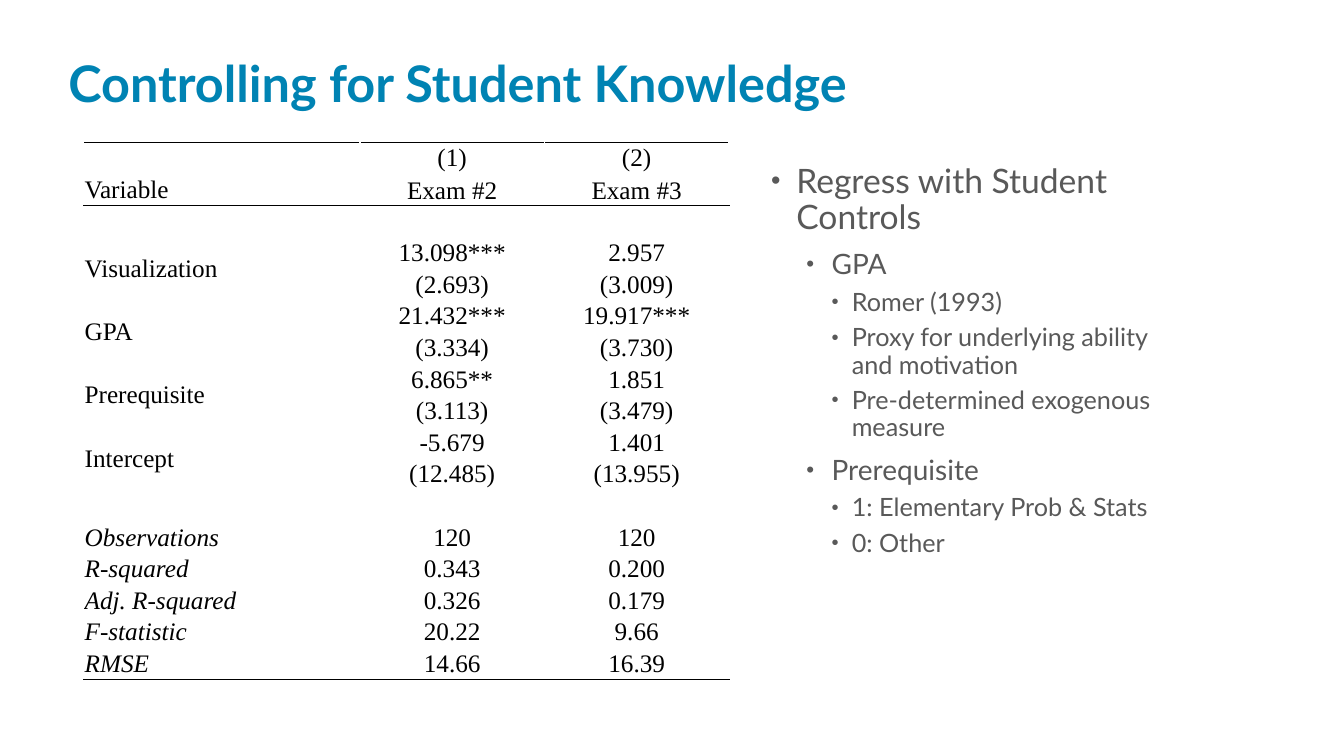
import pptx
import pptx.dml.color
import pptx.enum.text
import pptx.oxml
import pptx.oxml.ns
import pptx.util
from pptx.util import Inches

COLORS = {"title": "0083B3", "body": "595959", "table": "000000"}
ALIGN = pptx.enum.text.PP_ALIGN
ANCHOR = pptx.enum.text.MSO_ANCHOR

# Outline levels: left margin, indent, space before, text size
LEVELS = [(0.3, -0.25, 18, 24), (0.65, -0.25, 10, 20), (0.85, -0.2, 6, 18)]

OUTLINE = [
    (0, "Regress with Student Controls"),
    (1, "GPA"),
    (2, "Romer (1993)"),
    (2, "Proxy for underlying ability and motivation"),
    (2, "Pre-determined exogenous measure"),
    (1, "Prerequisite"),
    (2, "1: Elementary Prob & Stats"),
    (2, "0: Other"),
]

REGRESSION = [
    ("", "(1)", "(2)"),
    ("Variable", "Exam #2", "Exam #3"),
    ("", "", ""),
    ("Visualization", "13.098***", "2.957"),
    ("", "(2.693)", "(3.009)"),
    ("GPA", "21.432***", "19.917***"),
    ("", "(3.334)", "(3.730)"),
    ("Prerequisite", "6.865**", "1.851"),
    ("", "(3.113)", "(3.479)"),
    ("Intercept", "-5.679", "1.401"),
    ("", "(12.485)", "(13.955)"),
    ("", "", ""),
    ("Observations", "120", "120"),
    ("R-squared", "0.343", "0.200"),
    ("Adj. R-squared", "0.326", "0.179"),
    ("F-statistic", "20.22", "9.66"),
    ("RMSE", "14.66", "16.39"),
]
HEADER_ROW = 1
COEFFICIENT_ROWS = range(3, 11, 2)
FIRST_STATISTIC_ROW = 12
# Row index: sides that carry a rule
RULES = {0: "T", HEADER_ROW: "B", HEADER_ROW + 1: "T", len(REGRESSION) - 1: "B"}


class SlideBuilder:
    def __init__(self, slide):
        self.slide = slide
        self.text_font = "Lato"
        self.table_font = "Times New Roman"

    def style(self, paragraph, font_name, size, color, bold=False, italic=False):
        for run in paragraph.runs:
            run.font.name = font_name
            run.font.size = pptx.util.Pt(size)
            run.font.bold = bold
            run.font.italic = italic
            run.font.color.rgb = pptx.dml.color.RGBColor.from_string(COLORS[color])

    def text_frame(self, left, top, width, height, anchor):
        shape = self.slide.shapes.add_textbox(
            Inches(left), Inches(top), Inches(width), Inches(height))
        shape.text_frame.word_wrap = True
        shape.text_frame.vertical_anchor = anchor
        return shape.text_frame

    def title(self, text, *box):
        text_frame = self.text_frame(*box, ANCHOR.BOTTOM)
        text_frame.text = text
        paragraph = text_frame.paragraphs[0]
        paragraph.line_spacing = 0.8
        self.style(paragraph, self.text_font, 36, "title", bold=True)

    def bullet(self, paragraph, margin, indent):
        properties = paragraph._p.get_or_add_pPr()
        properties.set("marL", str(Inches(margin)))
        properties.set("indent", str(Inches(indent)))
        namespace = pptx.oxml.ns.nsdecls("a")
        for xml in (
            f'<a:buClr {namespace}><a:srgbClr val="{COLORS["body"]}"/></a:buClr>',
            f'<a:buSzPct {namespace} val="80000"/>',
            f'<a:buFont {namespace} typeface="Arial"/>',
            f'<a:buChar {namespace} char="•"/>',
        ):
            properties.append(pptx.oxml.parse_xml(xml))

    def outline(self, items, *box):
        text_frame = self.text_frame(*box, ANCHOR.TOP)
        for index, (level, text) in enumerate(items):
            paragraph = text_frame.add_paragraph() if index else text_frame.paragraphs[0]
            margin, indent, space_before, size = LEVELS[level]
            paragraph.text = text
            paragraph.level = level
            self.bullet(paragraph, margin, indent)
            paragraph.line_spacing = 0.9
            paragraph.space_before = pptx.util.Pt(space_before if index else 0)
            self.style(paragraph, self.text_font, size, "body")

    def rule(self, cell, side):
        cell._tc.get_or_add_tcPr().insert(0, pptx.oxml.parse_xml(
            f'<a:ln{side} {pptx.oxml.ns.nsdecls("a")} w="6350"><a:solidFill>'
            f'<a:srgbClr val="{COLORS["table"]}"/></a:solidFill></a:ln{side}>'))

    def cell(self, cell, text, row, column):
        cell.margin_left = cell.margin_right = cell.margin_top = Inches(0.01)
        cell.margin_bottom = 0
        cell.fill.background()
        bottom = row == HEADER_ROW and column > 0
        cell.vertical_anchor = ANCHOR.BOTTOM if bottom else ANCHOR.MIDDLE
        cell.text_frame.text = text
        paragraph = cell.text_frame.paragraphs[0]
        paragraph.alignment = ALIGN.CENTER if column else ALIGN.LEFT
        self.style(paragraph, self.table_font, 18, "table",
                   italic=column == 0 and row >= FIRST_STATISTIC_ROW)
        if row in RULES:
            self.rule(cell, RULES[row])

    def table(self, rows, column_widths, left, top, height):
        table = self.slide.shapes.add_table(
            len(rows), len(column_widths), Inches(left), Inches(top),
            Inches(sum(column_widths)), Inches(height)).table
        table.first_row = False
        table.horz_banding = False
        for column, width in zip(table.columns, column_widths):
            column.width = Inches(width)
        for row, texts in enumerate(rows):
            for column, text in enumerate(texts):
                self.cell(table.cell(row, column), text, row, column)
        # Each variable name spans its coefficient and standard error
        for row in COEFFICIENT_ROWS:
            table.cell(row, 0).merge(table.cell(row + 1, 0))


def main():
    presentation = pptx.Presentation()
    presentation.slide_width = Inches(13.33)
    presentation.slide_height = Inches(7.5)
    builder = SlideBuilder(presentation.slides.add_slide(presentation.slide_layouts[6]))

    # Title
    builder.title("Controlling for Student Knowledge", 0.58, -0.01, 11.08, 1.17)

    # Explanation of the controls
    builder.outline(OUTLINE, 7.5, 1.58, 4.17, 5)

    # Regression results
    builder.table(REGRESSION, [2.74, 1.83, 1.83], left=0.83, top=1.41, height=5.33)

    presentation.save("out.pptx")


if __name__ == "__main__":
    main()
